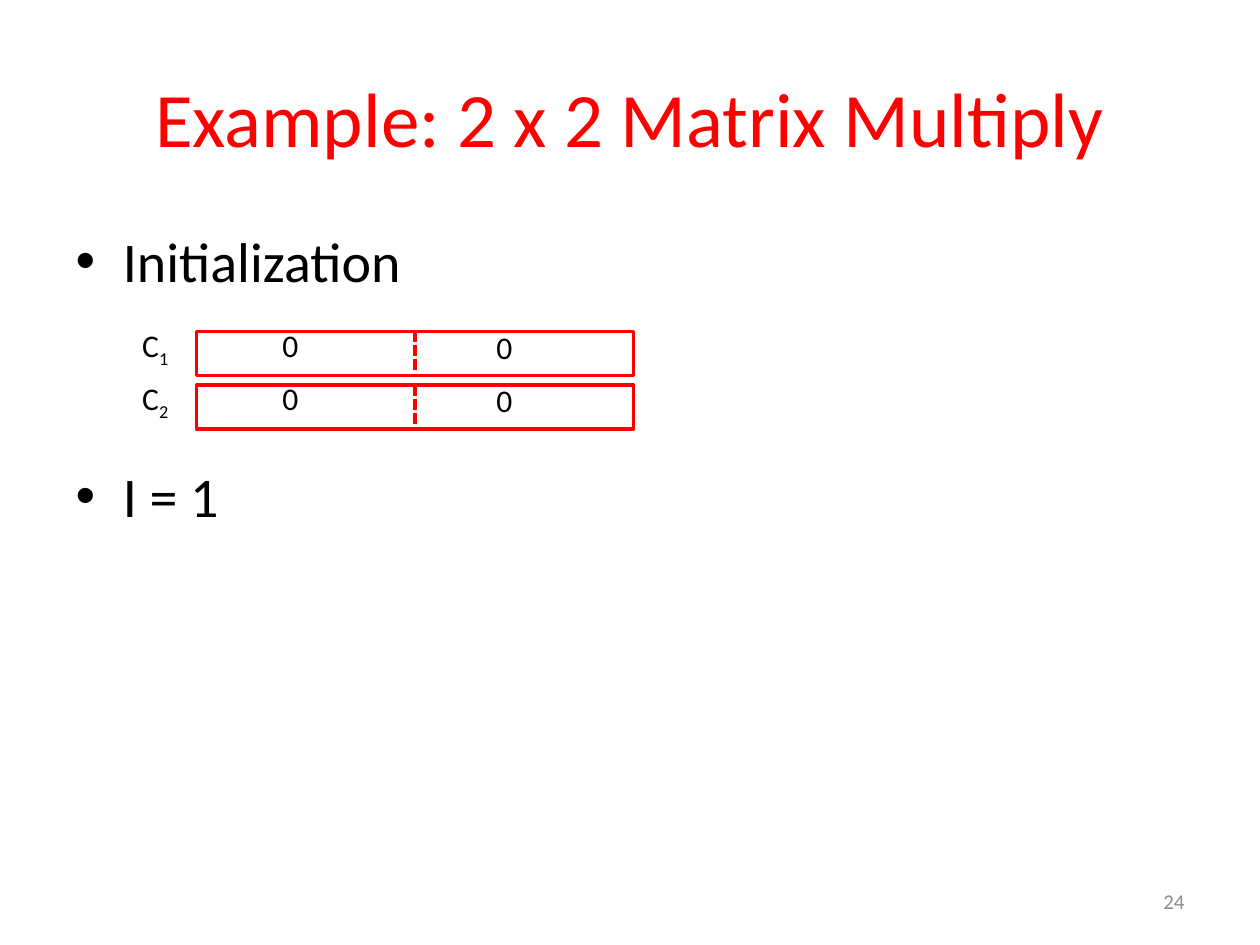
from pptx import Presentation
from pptx.dml.color import RGBColor
from pptx.enum.dml import MSO_LINE
from pptx.enum.shapes import MSO_CONNECTOR, MSO_SHAPE
from pptx.enum.text import MSO_ANCHOR, PP_ALIGN
from pptx.util import Pt
from lxml import etree

RED = RGBColor(0xFF, 0, 0)
BLACK = RGBColor(0, 0, 0)
GRAY = RGBColor(0x8C, 0x8C, 0x8C)
DRAWING = "{http://schemas.openxmlformats.org/drawingml/2006/main}"


def add_text(text, left, top, width, size=18, color=BLACK):
    box = slide.shapes.add_textbox(Pt(left), Pt(top), Pt(width), Pt(29))
    para = box.text_frame.paragraphs[0]
    para.text = text
    para.font.size = Pt(size)
    para.font.name = "Calibri"
    para.font.color.rgb = color
    return box.text_frame


deck = Presentation()
deck.slide_width, deck.slide_height = Pt(720), Pt(540)
slide = deck.slides.add_slide(deck.slide_layouts[1])

# Title and list
title, body = slide.placeholders
title.left, title.top, title.width, title.height = Pt(36), Pt(21.6), Pt(648), Pt(90)
title.text_frame.text = "Example: 2 x 2 Matrix Multiply"
head = title.text_frame.paragraphs[0]
head.font.size = Pt(44)
head.font.name = "Calibri"
head.font.color.rgb = RED

body.left, body.top, body.width, body.height = Pt(36), Pt(126), Pt(648), Pt(214.5)
body.text_frame.text = "Initialization\nI = 1"
for para in body.text_frame.paragraphs:
    para.font.size = Pt(32)
    para.font.name = "Calibri"
    para.font.color.rgb = BLACK
body.text_frame.paragraphs[1].space_before = Pt(95.5)  # room for the matrix rows

# Matrix rows, each split in two cells
for row in range(2):
    top = 189.3 + 30.8 * row
    bar = slide.shapes.add_shape(
        MSO_SHAPE.RECTANGLE, Pt(112.3), Pt(top), Pt(249.8), Pt(25.2))
    bar.shadow.inherit = False
    bar.fill.background()
    split = slide.shapes.add_connector(
        MSO_CONNECTOR.STRAIGHT, Pt(237.2), Pt(top), Pt(237.2), Pt(top + 25.2))
    split.begin_connect(bar, 0)
    split.end_connect(bar, 2)
    split.line.dash_style = MSO_LINE.SQUARE_DOT
    etree.SubElement(split._element.spPr, DRAWING + "effectLst")
    for shape in (bar, split):
        shape.line.color.rgb = RED
        shape.line.width = Pt(2)

    top = 182.9 + 30.4 * row
    label = add_text("C", 74.2, top, 31).paragraphs[0]
    sub = label.add_run()
    sub.text = str(row + 1)
    sub._r.get_or_add_rPr().set("baseline", "-25000")
    add_text("0", 154.3, top, 24)
    add_text("0", 276.5, top + 0.8, 24)

# Slide number
number = add_text("24", 516, 500.5, 168, 12, GRAY)
number.word_wrap = True
number.vertical_anchor = MSO_ANCHOR.MIDDLE
number.paragraphs[0].alignment = PP_ALIGN.RIGHT

deck.save("out.pptx")
